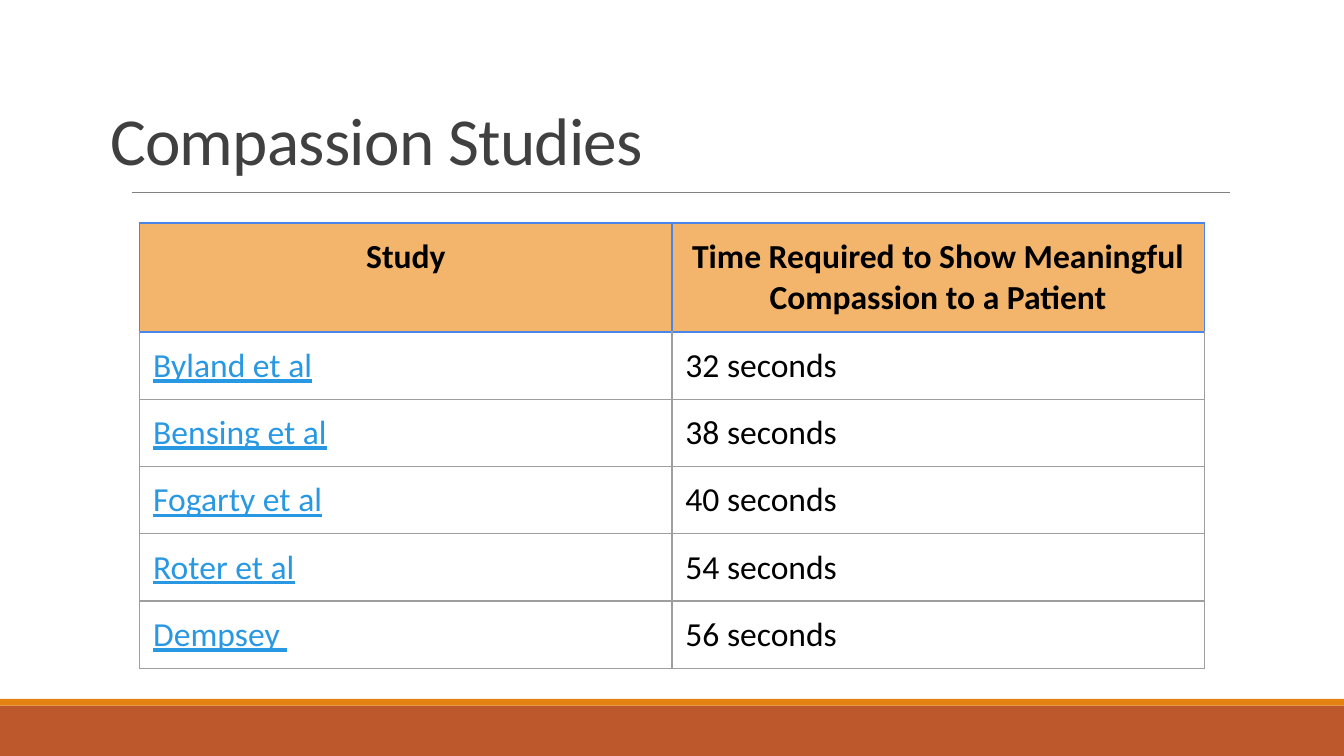
from lxml.etree import SubElement
from pptx import Presentation
from pptx.dml.color import RGBColor
from pptx.enum.shapes import MSO_CONNECTOR as Connector, MSO_SHAPE as Shape
from pptx.enum.text import MSO_ANCHOR as Anchor, PP_ALIGN as Align
from pptx.oxml.ns import qn
from pptx.util import Inches, Pt

WIDTH, HEIGHT = 10, 5.625
INSET = Inches(0.1)
FONT = "Calibri"
COLORS = {
    "footer": "BD582C",
    "stripe": "E48312",
    "rule": "808080",
    "title": "404040",
    "text": "000000",
    "study": "2998E3",
    "header": "F3B56C",
    "header_border": "4A86E8",
    "border": "9E9E9E",
}
HEADINGS = ("Study", "Time Required to Show Meaningful Compassion to a Patient")
STUDIES = (
    ("Byland et al", "32 seconds"),
    ("Bensing et al", "38 seconds"),
    ("Fogarty et al", "40 seconds"),
    ("Roter et al", "54 seconds"),
    ("Dempsey ", "56 seconds"),
)


def color(name):
    return RGBColor.from_string(COLORS[name])


def add_run(paragraph, text, size, color_name, bold=False, underline=False):
    run = paragraph.add_run()
    run.text = text
    font = run.font
    font.name, font.size = FONT, Pt(size)
    font.bold, font.underline = bold, underline
    font.color.rgb = color(color_name)
    return run


def set_insets(target):
    target.margin_left = target.margin_right = INSET
    target.margin_top = target.margin_bottom = INSET


def add_band(slide, top, height, color_name):
    band = slide.shapes.add_shape(
        Shape.RECTANGLE, 0, Inches(top), Inches(WIDTH), Inches(height))
    band.shadow.inherit = False
    band.fill.solid()
    band.fill.fore_color.rgb = color(color_name)
    band.line.fill.background()


def add_rule(slide, left, right, top):
    rule = slide.shapes.add_connector(
        Connector.STRAIGHT, Inches(left), Inches(top), Inches(right), Inches(top))
    rule.line.color.rgb = color("rule")
    rule.line.width = Pt(0.5)
    SubElement(rule._element.spPr, qn("a:effectLst"))


def add_title(slide, text):
    box = slide.shapes.add_textbox(
        Inches(0.72), Inches(0.59), Inches(8.99), Inches(0.84))
    frame = box.text_frame
    frame.word_wrap = True
    frame.vertical_anchor = Anchor.BOTTOM
    set_insets(frame)
    paragraph = frame.paragraphs[0]
    paragraph.line_spacing = 0.85
    run = add_run(paragraph, text, 36, "title")
    run._r.get_or_add_rPr().set("spc", "-40")


def set_borders(cell, names):
    properties = cell._tc.get_or_add_tcPr()
    for index, (side, name) in enumerate(zip(("lnL", "lnR", "lnT", "lnB"), names)):
        line = properties.makeelement(qn(f"a:{side}"), {"w": str(Pt(0.75))})
        fill = SubElement(line, qn("a:solidFill"))
        SubElement(fill, qn("a:srgbClr"), val=COLORS[name])
        properties.insert(index, line)


def fill_cell(cell, text, is_header, is_study, top_border):
    set_insets(cell)
    paragraph = cell.text_frame.paragraphs[0]
    if is_header:
        paragraph.alignment = Align.CENTER
        add_run(paragraph, text, 18, "text", bold=True)
        cell.fill.solid()
        cell.fill.fore_color.rgb = color("header")
        set_borders(cell, ["header_border"] * 4)
    else:
        add_run(paragraph, text, 18, "study" if is_study else "text", underline=is_study)
        cell.fill.background()
        set_borders(cell, ["border", "border", top_border, "border"])


def add_study_table(slide):
    rows = (HEADINGS, *STUDIES)
    heights = [0.81] + [0.5] * len(STUDIES)
    table = slide.shapes.add_table(
        len(rows), len(HEADINGS), Inches(1.04), Inches(1.66),
        Inches(7.92), Inches(sum(heights))).table
    table.first_row = table.horz_banding = False
    for row_index, (row, height) in enumerate(zip(rows, heights)):
        table.rows[row_index].height = Inches(height)
        top_border = "header_border" if row_index == 1 else "border"
        for column_index, text in enumerate(row):
            fill_cell(table.cell(row_index, column_index), text,
                      row_index == 0, column_index == 0, top_border)


def main():
    presentation = Presentation()
    presentation.slide_width = Inches(WIDTH)
    presentation.slide_height = Inches(HEIGHT)
    slide = presentation.slides.add_slide(presentation.slide_layouts[6])
    add_band(slide, 5.25, HEIGHT - 5.25, "footer")
    add_band(slide, 5.2, 0.05, "stripe")
    add_rule(slide, 0.98, 9.15, 1.43)
    add_title(slide, "Compassion Studies")
    add_study_table(slide)
    presentation.save("out.pptx")


if __name__ == "__main__":
    main()
